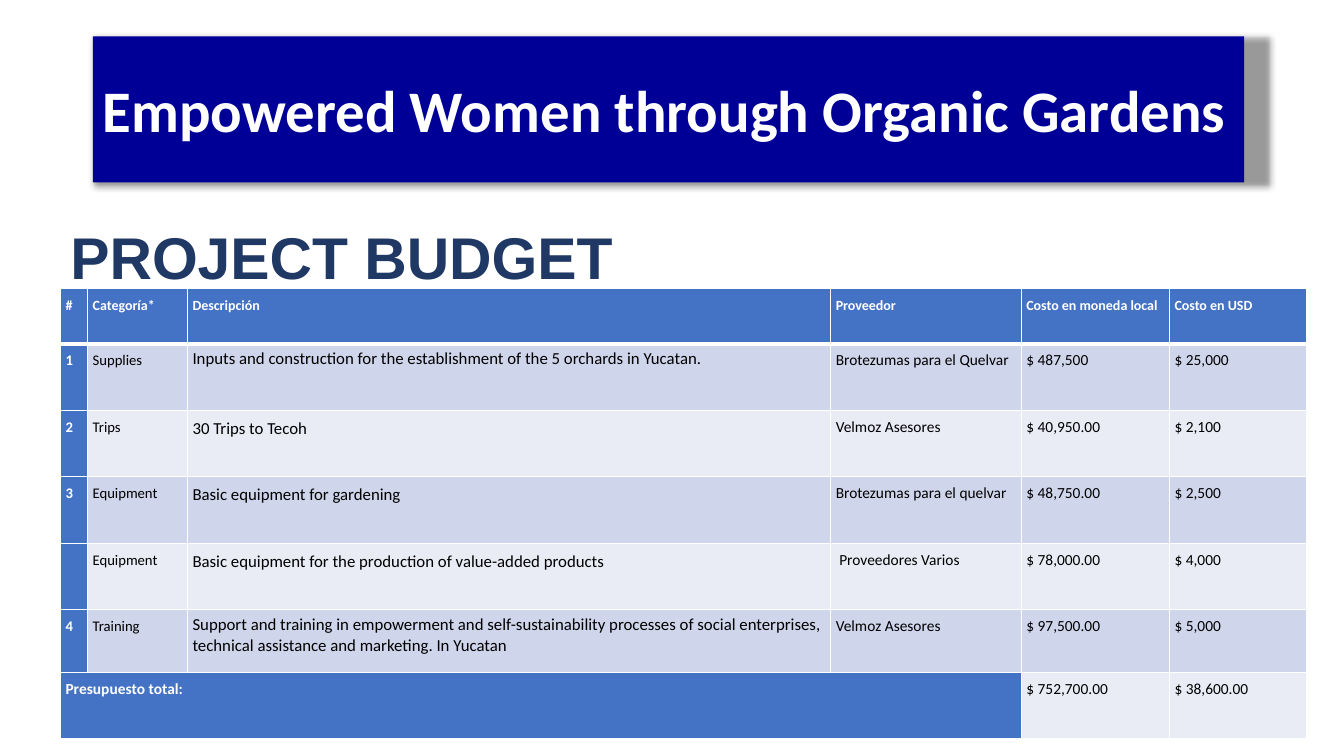
from typing import NamedTuple

from lxml.etree import SubElement
from pptx import Presentation
from pptx.dml.color import RGBColor
from pptx.enum.text import MSO_ANCHOR, MSO_AUTO_SIZE, PP_ALIGN
from pptx.oxml.ns import qn
from pptx.util import Inches, Pt

COLORS = {
    "navy": "000096",
    "heading": "203864",
    "blue": "4472C4",
    "dark band": "CFD5EA",
    "light band": "E9EBF5",
    "white": "FFFFFF",
    "black": "000000",
}
THIN, THICK = 0.96, 3
WIDTHS = (0.27, 0.99, 6.38, 1.89, 1.47, 1.36)
HEIGHTS = (0.55, 0.66, 0.66, 0.66, 0.66, 0.62, 0.66)
SIZES = (10.5, 10.5, 12, 11, 11, 11)
DESC = 2


class Item(NamedTuple):
    num: str
    kind: str
    desc: str
    vendor: str
    local: str
    usd: str


HEADER = Item("#", "Categoría*", "Descripción", "Proveedor",
              "Costo en moneda local", "Costo en USD")
ITEMS = (
    Item("1", "Supplies",
         "Inputs and construction for the establishment of the 5 orchards in Yucatan.",
         "Brotezumas para el Quelvar", "$ 487,500", "$ 25,000"),
    Item("2", "Trips", "30 Trips to Tecoh",
         "Velmoz Asesores", "$ 40,950.00", "$ 2,100"),
    Item("3", "Equipment", "Basic equipment for gardening",
         "Brotezumas para el quelvar", "$ 48,750.00", "$ 2,500"),
    Item("", "Equipment", "Basic equipment for the production of value-added products",
         " Proveedores Varios", "$ 78,000.00", "$ 4,000"),
    Item("4", "Training",
         "Support and training in empowerment and self-sustainability processes of "
         "social enterprises, technical assistance and marketing. In Yucatan",
         "Velmoz Asesores", "$ 97,500.00", "$ 5,000"),
)
TOTAL = Item("Presupuesto total:", "", "", "", "$ 752,700.00", "$ 38,600.00")


def rgb(name: str) -> RGBColor:
    return RGBColor.from_string(COLORS[name])


def style(para, size: float, color: str, bold: bool, face: str = "Calibri") -> None:
    for run in para.runs:
        font = run.font
        font.name, font.size, font.bold = face, Pt(size), bold
        font.color.rgb = rgb(color)


def place(shape, left: float, top: float, width: float, height: float) -> None:
    shape.left, shape.top = Inches(left), Inches(top)
    shape.width, shape.height = Inches(width), Inches(height)


def add_glow(shape) -> None:
    """Add a centred soft shadow, slightly larger than the shape."""
    effects = SubElement(shape._element.spPr, qn("a:effectLst"))
    shadow = SubElement(effects, qn("a:outerShdw"), blurRad=str(Pt(5)),
                        sx="102000", sy="102000", algn="ctr", rotWithShape="0")
    color = SubElement(shadow, qn("a:srgbClr"), val=COLORS["black"])
    SubElement(color, qn("a:alpha"), val="40000")


def add_banner(slide) -> None:
    title = slide.shapes.title
    place(title, 0.92, 0.36, 11.42, 1.45)
    title.fill.solid()
    title.fill.fore_color.rgb = rgb("navy")
    add_glow(title)
    frame = title.text_frame
    frame.text = "Empowered Women through Organic Gardens"
    frame.word_wrap = True
    frame.auto_size = MSO_AUTO_SIZE.NONE
    frame.vertical_anchor = MSO_ANCHOR.MIDDLE
    para = frame.paragraphs[0]
    para.alignment = PP_ALIGN.LEFT
    style(para, 42, "white", True)


def add_heading(slide) -> None:
    box = slide.shapes.add_textbox(Inches(0.6), Inches(1.72), Inches(11.97), Inches(5.42))
    frame = box.text_frame
    frame.word_wrap = True
    frame.margin_top = Inches(0.12)
    frame.text = "PROJECT BUDGET"
    para = frame.paragraphs[0]
    para.line_spacing = 1.5
    style(para, 42, "heading", True, "Arial")


def set_edges(cell, row: int) -> None:
    """Draw white cell borders, thick between the header and the first item."""
    props = cell._tc.get_or_add_tcPr()
    edges = {"lnL": THIN, "lnR": THIN,
             "lnT": THICK if row == 1 else THIN,
             "lnB": THICK if row == 0 else THIN}
    for tag, width in edges.items():
        line = SubElement(props, qn(f"a:{tag}"), w=str(Pt(width)))
        fill = SubElement(line, qn("a:solidFill"))
        SubElement(fill, qn("a:srgbClr"), val=COLORS["white"])


def fill_cell(cell, text: str, row: int, col: int) -> None:
    last = len(HEIGHTS) - 1
    strong = row == 0 or col == 0 or (row == last and col < 4)
    band = "dark band" if row % 2 else "light band"
    set_edges(cell, row)
    cell.fill.solid()
    cell.fill.fore_color.rgb = rgb("blue" if strong else band)
    cell.margin_left = cell.margin_right = Inches(0.05)
    cell.margin_top = cell.margin_bottom = Inches(0.05)
    cell.text = text
    para = cell.text_frame.paragraphs[0]
    if col != DESC or row == 0:
        para.line_spacing = Pt(15)
    elif 2 <= row <= 4:
        para.line_spacing = 1.15
        para.alignment = PP_ALIGN.JUSTIFY
    size = 10 if row == 0 else 11 if row == last else SIZES[col]
    style(para, size, "white" if strong else "black", strong)


def add_budget(slide) -> None:
    rows = (HEADER, *ITEMS, TOTAL)
    table = slide.shapes.add_table(len(rows), len(WIDTHS), Inches(0.6), Inches(2.86),
                                   Inches(sum(WIDTHS)), Inches(sum(HEIGHTS))).table
    table.horz_banding = False
    for col, width in zip(table.columns, WIDTHS):
        col.width = Inches(width)
    for line, height in zip(table.rows, HEIGHTS):
        line.height = Inches(height)
    for row, item in enumerate(rows):
        for col, text in enumerate(item):
            fill_cell(table.cell(row, col), text, row, col)
    end = len(rows) - 1
    table.cell(end, 0).merge(table.cell(end, 3))


def main() -> None:
    deck = Presentation()
    deck.slide_width, deck.slide_height = Inches(13.33), Inches(7.5)
    slide = deck.slides.add_slide(deck.slide_layouts[5])
    add_heading(slide)
    add_banner(slide)
    add_budget(slide)
    deck.save("out.pptx")


if __name__ == "__main__":
    main()
